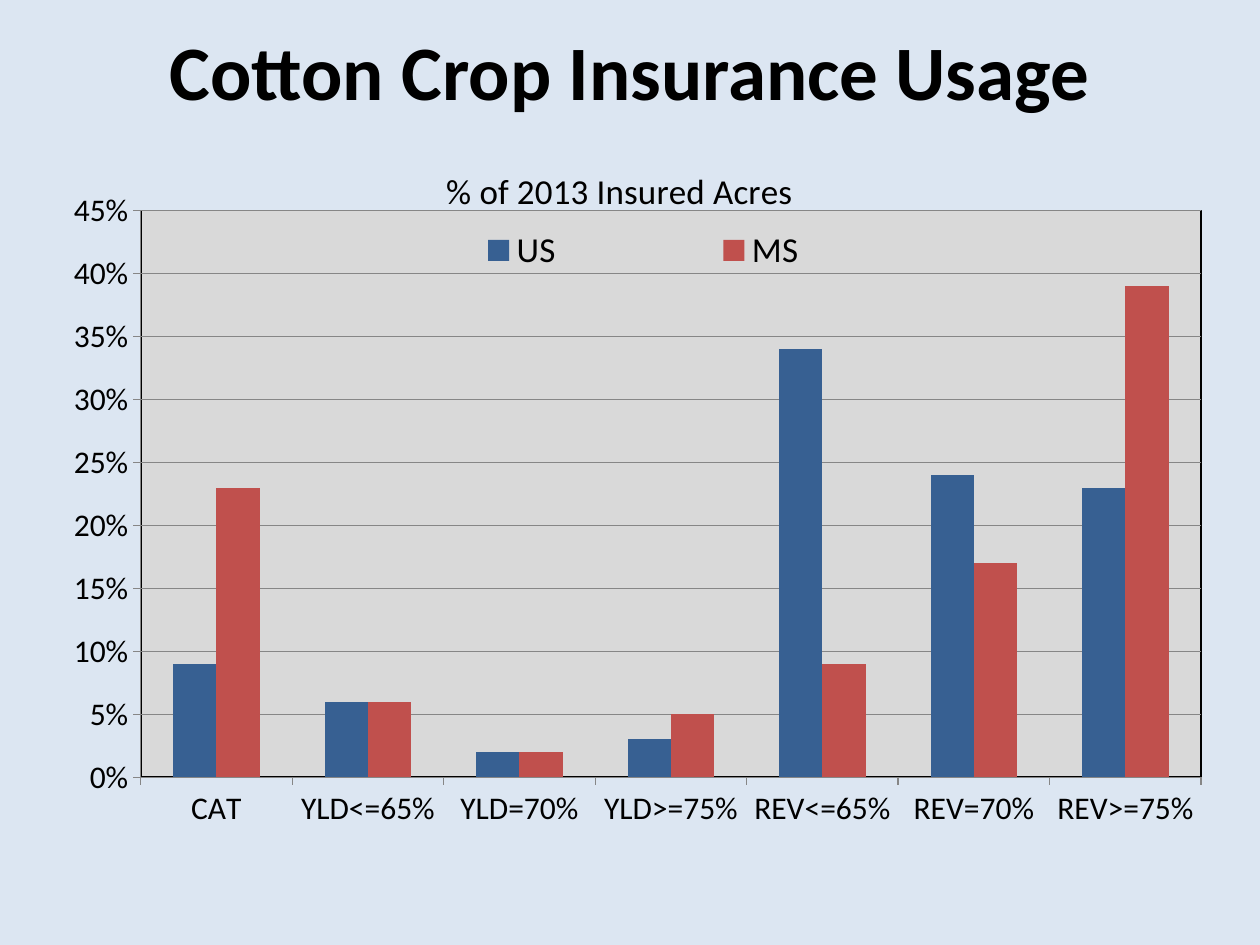
from dataclasses import dataclass

from lxml.etree import SubElement
from pptx import Presentation
from pptx.chart.chart import Chart
from pptx.chart.data import CategoryChartData
from pptx.dml.color import RGBColor
from pptx.enum.chart import XL_CHART_TYPE, XL_LEGEND_POSITION, XL_TICK_MARK
from pptx.enum.text import MSO_ANCHOR, PP_ALIGN
from pptx.oxml import parse_xml
from pptx.oxml.ns import nsdecls, qn
from pptx.util import Pt


@dataclass(frozen=True)
class Theme:
    font: str = "Calibri"
    background: RGBColor = RGBColor(0xDC, 0xE6, 0xF2)
    text: RGBColor = RGBColor(0, 0, 0)
    grid: RGBColor = RGBColor(0x86, 0x86, 0x86)
    plot: str = "D9D9D9"
    plot_border: str = "000000"
    title_size: int = 44
    heading_size: int = 20
    axis_size: int = 18


@dataclass(frozen=True)
class Region:
    name: str
    color: RGBColor
    shares: tuple[float, ...]


THEME = Theme()
COVERAGES = ("CAT", "YLD<=65%", "YLD=70%", "YLD>=75%",
             "REV<=65%", "REV=70%", "REV>=75%")
REGIONS = (
    Region("US", RGBColor(0x37, 0x60, 0x92),
           (0.09, 0.06, 0.02, 0.03, 0.34, 0.24, 0.23)),
    Region("MS", RGBColor(0xC0, 0x50, 0x4D),
           (0.23, 0.06, 0.02, 0.05, 0.09, 0.17, 0.39)),
)


def manual_layout(inner: bool = False, **fractions: float):
    """Build a c:layout from fractions (x, y, w, h) of the chart area."""
    layout = parse_xml(f"<c:layout {nsdecls('c')}/>")
    manual = SubElement(layout, qn("c:manualLayout"))
    if inner:
        SubElement(manual, qn("c:layoutTarget")).set("val", "inner")
    for key in ("x", "y"):
        SubElement(manual, qn(f"c:{key}Mode")).set("val", "edge")
    for key, value in fractions.items():
        SubElement(manual, qn(f"c:{key}")).set("val", str(value))
    return layout


def replace_layout(parent, layout, after: str | None = None) -> None:
    """Put layout behind the named child, or first when none is named."""
    for old in parent.findall(qn("c:layout")):
        parent.remove(old)
    if after is None:
        parent.insert(0, layout)
    else:
        parent.find(qn(after)).addnext(layout)


def style_heading(chart: Chart, text: str) -> None:
    chart.has_title = True
    paragraph = chart.chart_title.text_frame.paragraphs[0]
    run = paragraph.add_run()
    run.text = text
    run.font.size = Pt(THEME.heading_size)
    run.font.bold = False
    run.font.name = THEME.font
    run.font.color.rgb = THEME.text
    title = chart.chart_title._element
    replace_layout(title, manual_layout(x=0.35, y=0.04), after="c:tx")
    title.find(qn("c:overlay")).set("val", "1")


def style_axes(chart: Chart) -> None:
    for axis in (chart.category_axis, chart.value_axis):
        axis.major_tick_mark = XL_TICK_MARK.OUTSIDE
        axis.minor_tick_mark = XL_TICK_MARK.NONE
        axis.tick_labels.font.size = Pt(THEME.axis_size)
        axis.format.line.color.rgb = THEME.grid
    shares = chart.value_axis
    shares.minimum_scale, shares.maximum_scale = 0, 0.45
    shares.major_unit = 0.05
    shares.tick_labels.number_format = "0%"
    shares.tick_labels.number_format_is_linked = False
    shares.has_major_gridlines = True
    shares.major_gridlines.format.line.color.rgb = THEME.grid


def style_plot(chart: Chart) -> None:
    plot = chart.plots[0]
    plot.gap_width, plot.overlap, plot.vary_by_categories = 150, 0, False
    for series, region in zip(plot.series, REGIONS):
        series.format.fill.solid()
        series.format.fill.fore_color.rgb = region.color
    area = chart._chartSpace.find(qn("c:chart")).find(qn("c:plotArea"))
    replace_layout(area, manual_layout(True, x=0.1, y=0.107, w=0.886, h=0.75))
    area.append(parse_xml(
        f"<c:spPr {nsdecls('c', 'a')}>"
        f'<a:solidFill><a:srgbClr val="{THEME.plot}"/></a:solidFill>'
        f'<a:ln w="12700"><a:solidFill><a:srgbClr val="{THEME.plot_border}"/>'
        "</a:solidFill></a:ln></c:spPr>"))


def style_legend(chart: Chart) -> None:
    chart.has_legend = True
    legend = chart.legend
    legend.position = XL_LEGEND_POSITION.RIGHT
    legend.include_in_layout = False
    legend.font.size = Pt(THEME.heading_size)
    replace_layout(legend._element,
                   manual_layout(x=0.26, y=0.12, w=0.52, h=0.08),
                   after="c:legendPos")


def add_title(slide, text: str) -> None:
    title = slide.shapes.title
    title.left, title.top, title.width, title.height = (
        Pt(12), Pt(6), Pt(696), Pt(68))
    title.text_frame.vertical_anchor = MSO_ANCHOR.MIDDLE
    paragraph = title.text_frame.paragraphs[0]
    paragraph.alignment = PP_ALIGN.CENTER
    run = paragraph.add_run()
    run.text = text
    run.font.name = THEME.font
    run.font.size = Pt(THEME.title_size)
    run.font.bold = True
    run.font.color.rgb = THEME.text


def add_usage_chart(slide) -> None:
    data = CategoryChartData(number_format="0%")
    data.categories = COVERAGES
    for region in REGIONS:
        data.add_series(region.name, region.shares)
    chart = slide.shapes.add_chart(XL_CHART_TYPE.COLUMN_CLUSTERED,
                                   Pt(12), Pt(74), Pt(684), Pt(432), data).chart
    chart.font.name = THEME.font
    chart.font.size = Pt(THEME.axis_size)
    chart.font.color.rgb = THEME.text
    style_heading(chart, "% of 2013 Insured Acres")
    style_axes(chart)
    style_plot(chart)
    style_legend(chart)


def main() -> None:
    presentation = Presentation()
    presentation.slide_width, presentation.slide_height = Pt(720), Pt(540)
    slide = presentation.slides.add_slide(presentation.slide_layouts[5])
    slide.background.fill.solid()
    slide.background.fill.fore_color.rgb = THEME.background
    add_title(slide, "Cotton Crop Insurance Usage")
    add_usage_chart(slide)
    presentation.save("out.pptx")


if __name__ == "__main__":
    main()
